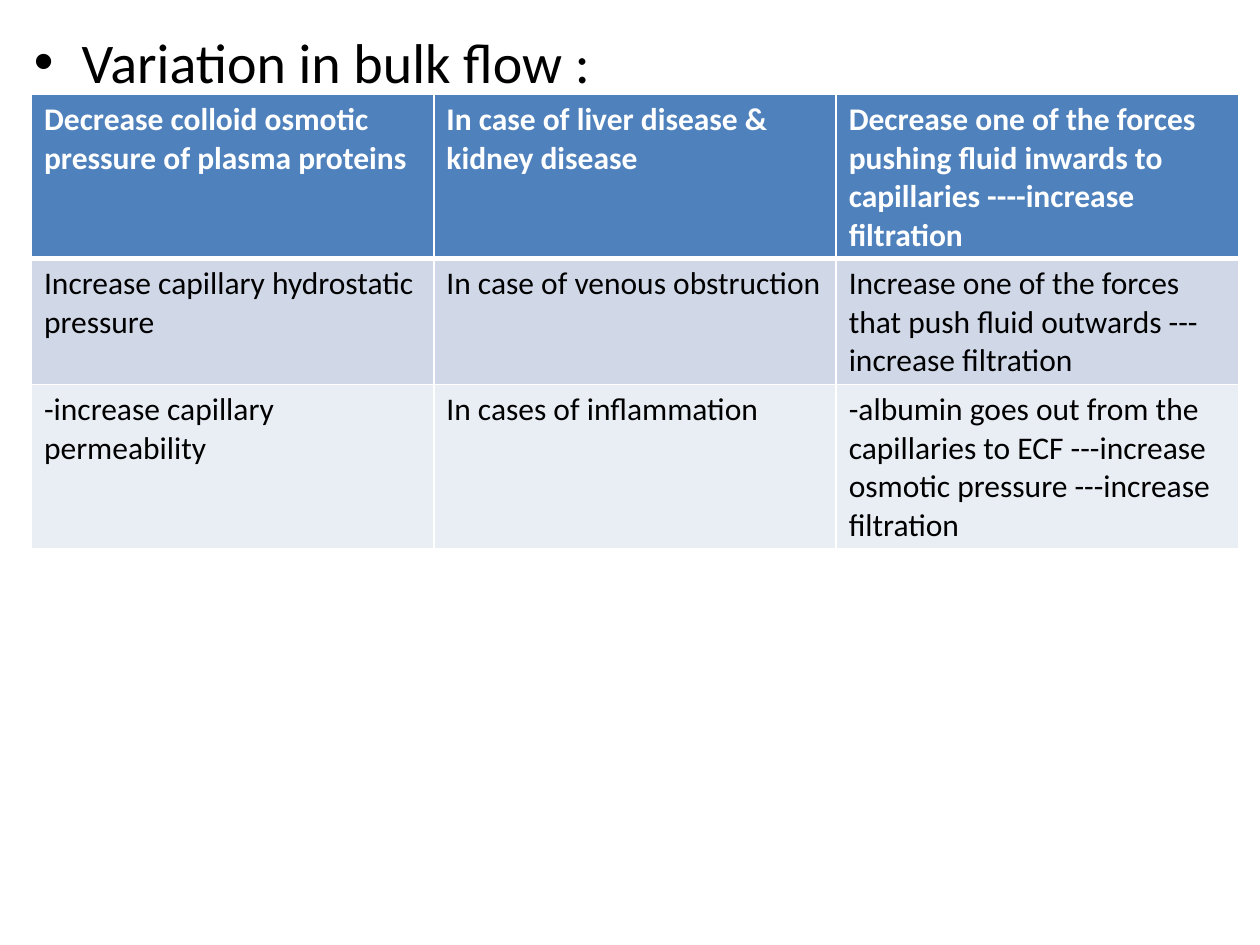
from pptx import Presentation
from pptx.dml.color import RGBColor
from pptx.oxml import parse_xml
from pptx.oxml.ns import nsdecls
from pptx.util import Inches, Pt

FONT = "Calibri"
COLORS = {"text": "000000", "header_text": "FFFFFF", "header": "4F81BD",
          "odd_row": "D0D8E8", "even_row": "E9EDF4", "border": "FFFFFF"}
ROWS = [
    ["Decrease colloid osmotic pressure of plasma proteins",
     "In case of liver disease & kidney disease",
     "Decrease one of the forces pushing fluid inwards to capillaries "
     "----increase filtration"],
    ["Increase capillary hydrostatic pressure",
     "In case of venous obstruction",
     "Increase one of the forces that push fluid outwards ---increase filtration"],
    ["-increase capillary permeability",
     "In cases of inflammation",
     "-albumin goes out from the capillaries to ECF ---increase osmotic pressure "
     "---increase filtration"],
]


def rgb(name):
    return RGBColor.from_string(COLORS[name])


def format_text(paragraph, size, color, bold=False):
    for run in paragraph.runs:
        run.font.name = FONT
        run.font.size = Pt(size)
        run.font.bold = bold
        run.font.color.rgb = rgb(color)


def set_borders(cell, bottom_width):
    """Draw white cell edges, 1 pt except for the bottom one."""
    properties = cell._tc.get_or_add_tcPr()
    widths = {"lnL": 1, "lnR": 1, "lnT": 1, "lnB": bottom_width}
    for position, (edge, width) in enumerate(widths.items()):
        properties.insert(position, parse_xml(
            f'<a:{edge} {nsdecls("a")} w="{Pt(width)}"><a:solidFill>'
            f'<a:srgbClr val="{COLORS["border"]}"/></a:solidFill></a:{edge}>'))


def add_heading(slide, left, top, width, height):
    frame = slide.shapes.add_textbox(left, top, width, height).text_frame
    frame.word_wrap = True
    heading = frame.paragraphs[0]
    heading.text = "Variation in bulk flow :"
    format_text(heading, 32, "text")
    properties = heading._p.get_or_add_pPr()
    indent = Inches(0.38)
    properties.set("marL", str(indent))
    properties.set("indent", str(-indent))
    for part in ('<a:spcBef {}><a:spcPct val="20000"/></a:spcBef>',
                 '<a:buFont {} typeface="Arial"/>',
                 '<a:buChar {} char="•"/>'):
        properties.append(parse_xml(part.format(nsdecls("a"))))


def add_flow_table(slide, left, top, width, height):
    holder = slide.shapes.add_table(len(ROWS), len(ROWS[0]), left, top, width, height)
    table = holder.table
    for row, (row_index, wording) in zip(table.rows, enumerate(ROWS)):
        row.height = Inches(0.6)
        is_header = row_index == 0
        fill = "header" if is_header else "odd_row" if row_index % 2 else "even_row"
        for cell, words in zip(row.cells, wording):
            cell.text = words
            format_text(cell.text_frame.paragraphs[0], 18,
                        "header_text" if is_header else "text", is_header)
            cell.fill.solid()
            cell.fill.fore_color.rgb = rgb(fill)
            set_borders(cell, 3 if is_header else 1)
    holder.height = height


def main():
    deck = Presentation()
    deck.slide_width, deck.slide_height = Inches(10), Inches(7.5)
    slide = deck.slides.add_slide(deck.slide_layouts[6])
    add_heading(slide, Inches(0.17), Inches(0.17), Inches(9.58), Inches(7.08))
    add_flow_table(slide, Inches(0.25), Inches(0.75), Inches(9.58), Inches(3.6))
    deck.save("out.pptx")


if __name__ == "__main__":
    main()
